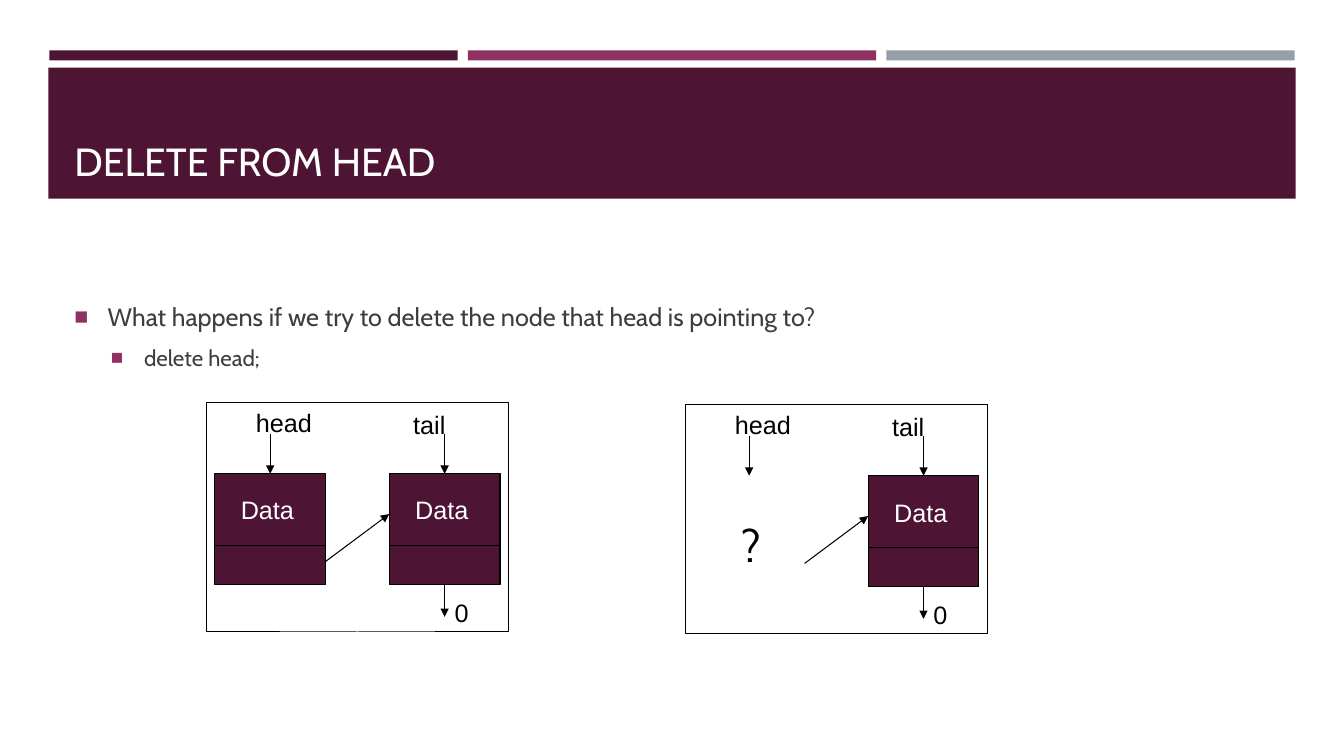
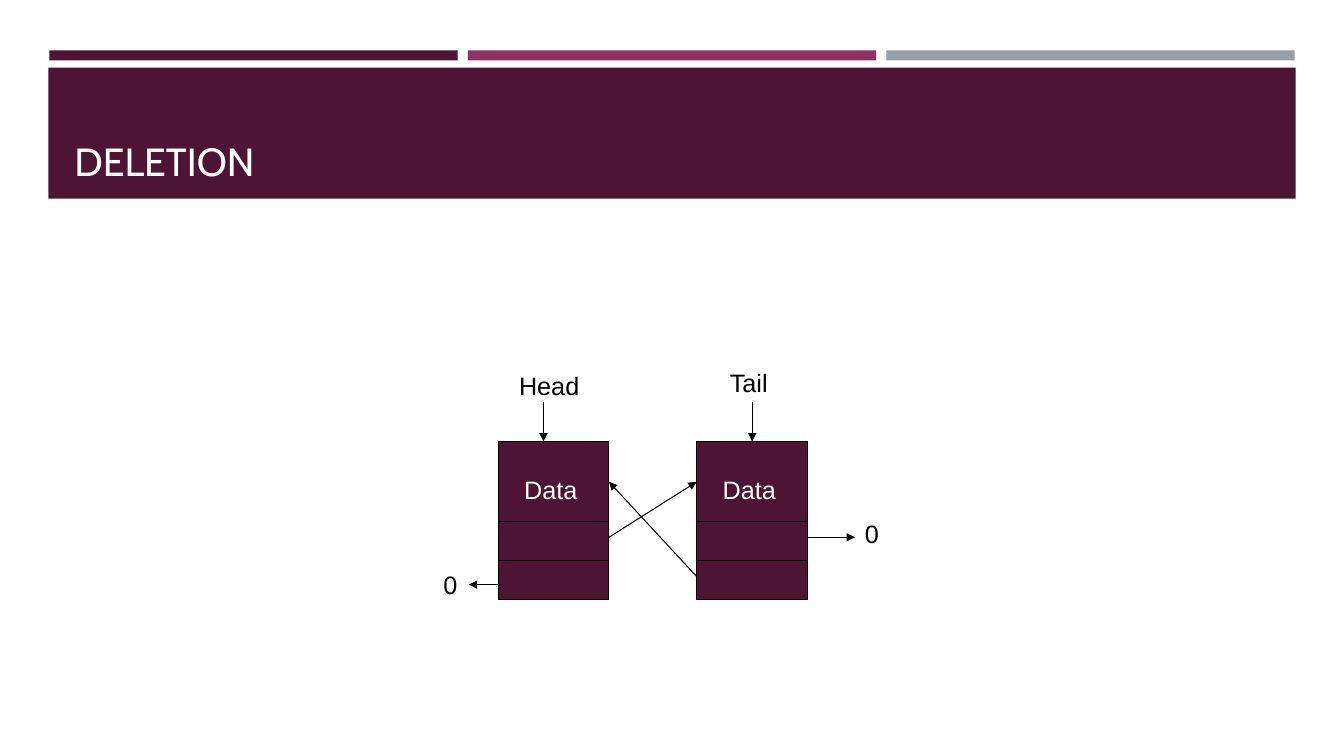
"""Build two slides on deleting nodes from linked lists."""
import dataclasses

import lxml.etree
import pptx
import pptx.dml.color
import pptx.enum.shapes
import pptx.enum.text
import pptx.oxml
import pptx.oxml.ns
import pptx.util

Inches = pptx.util.Inches
Pt = pptx.util.Pt
Color = pptx.dml.color.RGBColor.from_string
qn = pptx.oxml.ns.qn


@dataclasses.dataclass(frozen=True)
class Theme:
    plum: str = "4D1434"
    magenta: str = "903163"
    gray: str = "969FA7"
    ink: str = "3D3D3D"
    black: str = "000000"
    white: str = "FFFFFF"
    heading_font: str = "Cabin"
    label_font: str = "Arial"
    title_size: int = 28
    question_size: int = 32
    label_size: int = 18
    detail_size: int = 16
    line_width: float = 0.75


theme = Theme()


def add_rectangle(slide, left, top, width, height, fill=None, outlined=True):
    box = slide.shapes.add_shape(
        pptx.enum.shapes.MSO_SHAPE.RECTANGLE,
        Inches(left), Inches(top), Inches(width), Inches(height))
    box.shadow.inherit = False
    if fill:
        box.fill.solid()
        box.fill.fore_color.rgb = Color(fill)
    else:
        box.fill.background()
    if outlined:
        box.line.color.rgb = Color(theme.black)
        box.line.width = Pt(theme.line_width)
    else:
        box.line.fill.background()
    return box


def add_text(slide, text, left, top, width, height=0.4, size=theme.label_size,
             font=theme.label_font, color=theme.black, wrap=False):
    box = slide.shapes.add_textbox(
        Inches(left), Inches(top), Inches(width), Inches(height))
    frame = box.text_frame
    frame.word_wrap = wrap
    frame.text = text
    for para in frame.paragraphs:
        for span in para.runs:
            span.font.name = font
            span.font.size = Pt(size)
            span.font.color.rgb = Color(color)
    return box


deck = pptx.Presentation()
deck.slide_width = Inches(13.33)
deck.slide_height = Inches(7.5)

slides = []
for title in ("DELETE FROM HEAD", "DELETION"):
    slide = deck.slides.add_slide(deck.slide_layouts[6])
    slides.append(slide)
    for column, color in enumerate((theme.plum, theme.magenta, theme.gray)):
        add_rectangle(slide, 0.49 + column * 4.15, 0.5, 4.05, 0.1, color, False)
    add_rectangle(slide, 0.48, 0.67, 12.37, 1.3, theme.plum, False)
    title_box = add_text(slide, title, 0.64, 0.77, 12.06, 1.11, theme.title_size,
                         theme.heading_font, theme.white, True)
    title_box.text_frame.vertical_anchor = pptx.enum.text.MSO_ANCHOR.BOTTOM
head_slide, deletion_slide = slides

body = add_text(
    head_slide,
    "What happens if we try to delete the node that head is pointing to?\ndelete head;",
    0.64, 2.94, 12.06, 0.9, theme.label_size, theme.heading_font, theme.ink, True)
for level, para in enumerate(body.text_frame.paragraphs):
    para.level = level
    para.space_before = Pt(3 * level)
    para.space_after = Pt(6)
    properties = para._p.get_or_add_pPr()
    properties.set("marL", str(Inches(0.33 + 0.36 * level)))
    properties.set("indent", str(Inches(-0.33)))
    bullet_color = lxml.etree.SubElement(properties, qn("a:buClr"))
    lxml.etree.SubElement(bullet_color, qn("a:srgbClr"), val=theme.magenta)
    lxml.etree.SubElement(properties, qn("a:buSzPct"), val="92000")
    lxml.etree.SubElement(properties, qn("a:buFont"), typeface="Arial")
    lxml.etree.SubElement(properties, qn("a:buChar"), char="■")
body.text_frame.paragraphs[1].runs[0].font.size = Pt(theme.detail_size)

node_width = 1.1
node_middle = node_width / 2
connectors = []

for left, top, head_exists in ((2.05, 3.99, True), (6.8, 4.01, False)):
    add_rectangle(head_slide, left, top, 2.99, 2.28)
    head_left, tail_left = left + 0.08, left + 1.81
    node_top, node_bottom = top + 0.71, top + 1.81
    nodes = {}
    for node_left in (head_left, tail_left) if head_exists else (tail_left,):
        nodes[node_left] = add_rectangle(
            head_slide, node_left, node_top, node_width, 1.1, theme.plum)
        add_text(head_slide, "Data", node_left + 0.16, node_top + 0.16, 0.73,
                 color=theme.white)
        divider = node_top + 0.71
        connectors.append((head_slide, (node_left, divider),
                           (node_left + node_width, divider), False, None, None))
    for node_left in (head_left, tail_left):
        middle = node_left + node_middle
        node = nodes.get(node_left)
        connectors.append((head_slide, (middle, top + 0.32), (middle, node_top),
                           True, None, node and (node, 0)))
    middle = tail_left + node_middle
    connectors.append((head_slide, (middle, node_bottom), (middle, top + 2.13),
                       True, (nodes[tail_left], 2), None))
    connectors.append((head_slide, (head_left + node_width, top + 1.58),
                       (tail_left, top + 1.11), True, None, None))
    for label, right, down, width in (
            ("head", 0.39, 0, 0.76), ("tail", 1.95, 0.02, 0.52), ("0", 2.36, 1.89, 0.34)):
        add_text(head_slide, label, left + right, top + down, width)
    if not head_exists:
        add_text(head_slide, "?", left + 0.46, top + 1.08, 0.35, 0.64,
                 theme.question_size, theme.heading_font)

first_left, second_left, node_top = 4.94, 6.91, 4.38
first_right, second_right = first_left + node_width, second_left + node_width
for node_left in (first_left, second_left):
    last_node = add_rectangle(
        deletion_slide, node_left, node_top, node_width, 1.57, theme.plum)
    add_text(deletion_slide, "Data", node_left + 0.16, node_top + 0.28, 0.73,
             color=theme.white)
    for divider in (5.17, 5.56):
        connectors.append((deletion_slide, (node_left, divider),
                           (node_left + node_width, divider), False, None, None))
for start, end, end_join in (
        ((first_right, 5.33), (second_left, 4.78), None),
        ((first_left, 5.8), (4.65, 5.8), None),
        ((second_left, 5.72), (first_right, 4.78), None),
        ((second_right, 5.33), (8.48, 5.33), None),
        ((5.39, 3.99), (5.39, node_top), None),
        ((7.46, 3.99), (7.46, node_top), (last_node, 0))):
    connectors.append((deletion_slide, start, end, True, None, end_join))
for label, left, top, width in (
        ("0", 8.48, 5.09, 0.34), ("Head", 5.05, 3.62, 0.8),
        ("Tail", 7.14, 3.59, 0.58), ("0", 4.3, 5.6, 0.34)):
    add_text(deletion_slide, label, left, top, width)

for slide, start, end, has_arrow, begin_join, end_join in connectors:
    connector = slide.shapes.add_connector(
        pptx.enum.shapes.MSO_CONNECTOR.STRAIGHT,
        *(Inches(value) for value in start + end))
    connector.line.color.rgb = Color(theme.black)
    connector.line.width = Pt(theme.line_width)
    if has_arrow:
        lxml.etree.SubElement(
            connector.line._get_or_add_ln(), qn("a:tailEnd"), type="triangle")
    lxml.etree.SubElement(connector._element.spPr, qn("a:effectLst"))
    if begin_join:
        connector.begin_connect(*begin_join)
    if end_join:
        connector.end_connect(*end_join)

deck.save("out.pptx")
